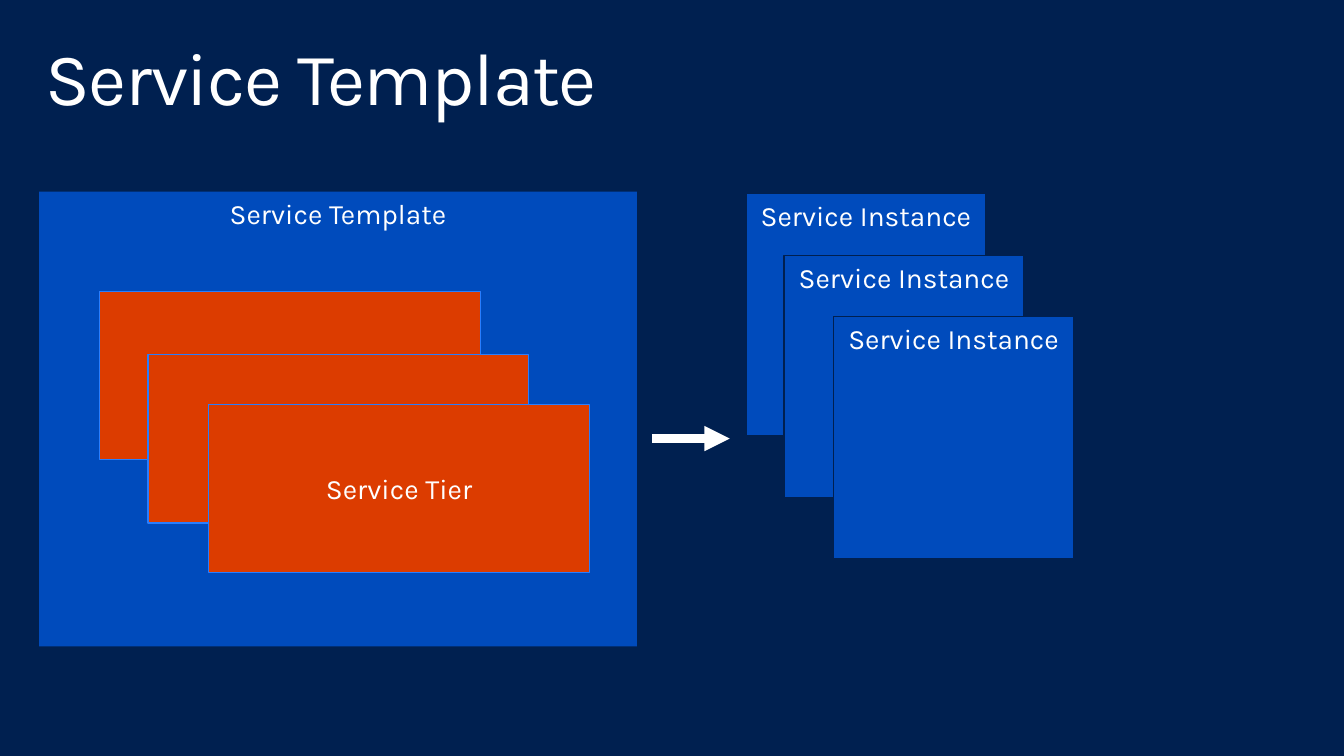
from lxml import etree
from pptx import Presentation
from pptx import util as u
from pptx.dml.color import RGBColor
from pptx.enum import shapes, text
from pptx.oxml.ns import qn

COLORS = {
    "background": "002050",
    "blue": "004BBC",
    "orange": "DC3C00",
    "tier_line": "287EFF",
    "white": "FFFFFF",
}
FONT = "Karla"
TIER_SIZE = (9.6, 4.24)
TIER_CORNERS = [(2.51, 7.34), (3.73, 8.94), (5.26, 10.19)]
INSTANCE_SIZE = (6.05, 6.1)
INSTANCE_LEFTS = [18.8, 19.76, 21.01]
INSTANCE_TOP, INSTANCE_STEP = 4.88, 1.55


def color(name):
    return RGBColor.from_string(COLORS[name])


def write_text(shape, words, size, anchor, align, inset_x, inset_y):
    frame = shape.text_frame
    frame.text = words
    frame.word_wrap = True
    frame.vertical_anchor = anchor
    frame.margin_left = frame.margin_right = u.Cm(inset_x)
    frame.margin_top = frame.margin_bottom = u.Cm(inset_y)
    paragraph = frame.paragraphs[0]
    paragraph.alignment = align
    font = paragraph.runs[0].font
    font.name = FONT
    font.size = u.Pt(size)
    font.color.rgb = color("white")
    return paragraph


def add_title(slide, words):
    box = slide.shapes.add_textbox(u.Cm(0.74), u.Cm(0.81), u.Cm(32.39), u.Cm(2.49))
    paragraph = write_text(box, words, 52.9, text.MSO_ANCHOR.TOP,
                           text.PP_ALIGN.LEFT, 0.41, 0.25)
    paragraph.line_spacing = 0.9
    paragraph.runs[0].font._element.set("spc", "-100")


def add_box(slide, corner, size, fill, line=None, label="",
            anchor=text.MSO_ANCHOR.TOP):
    lengths = [u.Cm(value) for value in (*corner, *size)]
    shape = slide.shapes.add_shape(shapes.MSO_SHAPE.RECTANGLE, *lengths)
    shape.shadow.inherit = False
    shape.fill.solid()
    shape.fill.fore_color.rgb = color(fill)
    if line:
        shape.line.color.rgb = color(line)
        shape.line.width = u.Pt(0.85)
    else:
        shape.line.fill.background()
    if label:
        write_text(shape, label, 20, anchor, text.PP_ALIGN.CENTER, 0, 0.13)


def add_arrow(slide, left, right, height):
    arrow = slide.shapes.add_connector(
        shapes.MSO_CONNECTOR.STRAIGHT,
        u.Cm(left), u.Cm(height), u.Cm(right), u.Cm(height))
    arrow.line.color.rgb = color("white")
    arrow.line.width = u.Pt(6)
    etree.SubElement(arrow.line._get_or_add_ln(), qn("a:tailEnd"), type="triangle")
    etree.SubElement(arrow._element.spPr, qn("a:effectLst"))


def main():
    presentation = Presentation()
    presentation.slide_width = u.Cm(33.87)
    presentation.slide_height = u.Cm(19.05)
    slide = presentation.slides.add_slide(presentation.slide_layouts[6])
    slide.background.fill.solid()
    slide.background.fill.fore_color.rgb = color("background")

    add_title(slide, "Service Template")
    add_box(slide, (0.99, 4.83), (15.06, 11.46), "blue", label="Service Template")
    for corner, label in zip(TIER_CORNERS, ["", "", "Service Tier"]):
        add_box(slide, corner, TIER_SIZE, "orange", "tier_line", label,
                text.MSO_ANCHOR.MIDDLE)
    for index, left in enumerate(INSTANCE_LEFTS):
        corner = (left, INSTANCE_TOP + index * INSTANCE_STEP)
        add_box(slide, corner, INSTANCE_SIZE, "blue", "background",
                "Service Instance")
    add_arrow(slide, 16.43, 18.39, 11.05)

    presentation.save("out.pptx")


if __name__ == "__main__":
    main()
